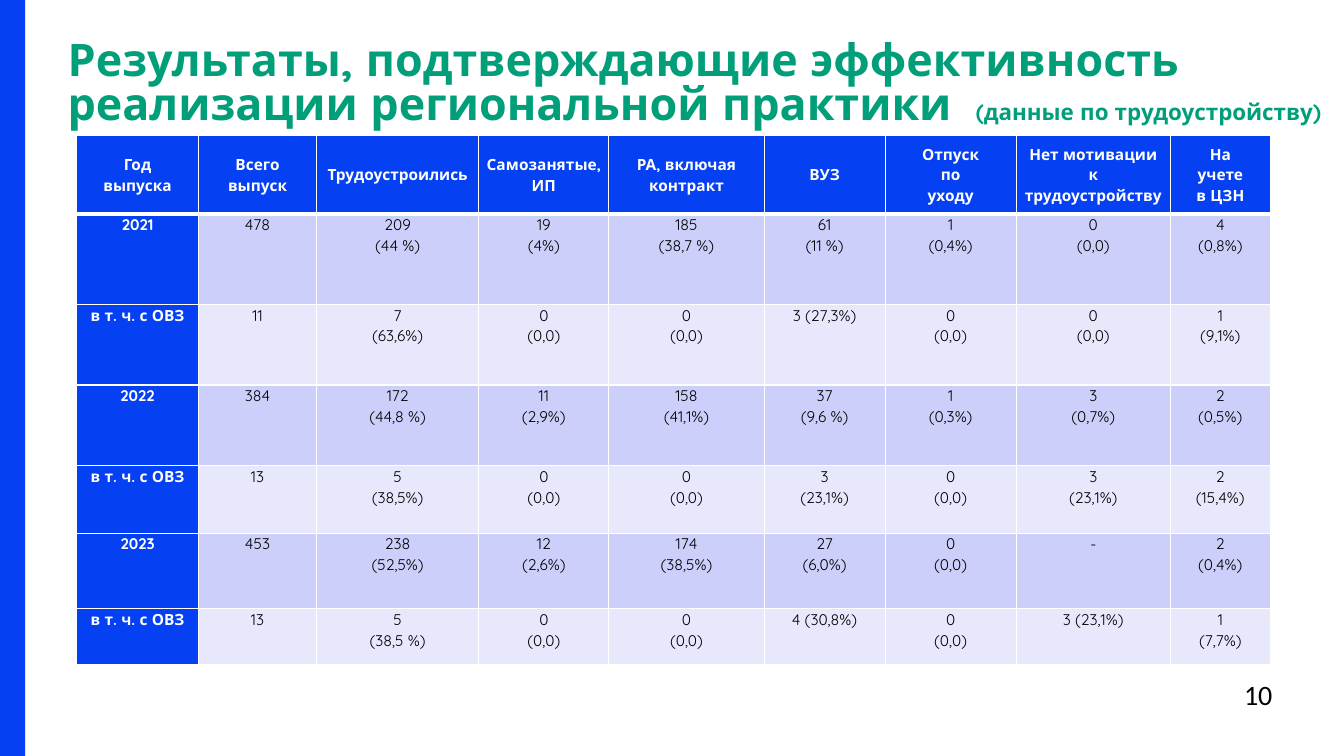
from lxml.etree import SubElement as Sub
from pptx import Presentation
from pptx.dml.color import RGBColor
from pptx.enum.shapes import MSO_SHAPE as Shape
from pptx.enum.text import MSO_ANCHOR as Anchor, PP_ALIGN as Align
from pptx.oxml.ns import qn
from pptx.util import Pt

PX = 9144
BLUE = RGBColor(0x05, 0x40, 0xF2)
GREEN = RGBColor(0x00, 0x9F, 0x79)
WHITE = RGBColor(0xFF, 0xFF, 0xFF)
BLACK = RGBColor(0x00, 0x00, 0x00)
BANDS = RGBColor(0xCC, 0xCF, 0xFA), RGBColor(0xE7, 0xE8, 0xFC)
FACE = "Quicksand"
COLS = [121, 117, 161, 129, 154, 120, 130, 153, 99]
ROWS = [78, 90, 80, 80, 67, 75, 55]
HEAD = ["Год\nвыпуска", "Всего выпуск", "Трудоустроились", "Самозанятые, ИП",
        "РА, включая\nконтракт", "ВУЗ", "Отпуск\nпо\nуходу",
        "Нет мотивации к трудоустройству", "На\nучете\nв ЦЗН"]
ZERO = "0\n(0,0)"
PART = "в т. ч. с ОВЗ"
DATA = [
    HEAD,
    ["2021", "478", "209\n(44 %)", "19\n(4%)", "185\n(38,7 %)", "61\n(11 %)",
     "1\n(0,4%)", ZERO, "4\n(0,8%)"],
    [PART, "11", "7\n(63,6%)", ZERO, ZERO, "3 (27,3%)", ZERO, ZERO, "1\n(9,1%)"],
    ["2022", "384", "172\n(44,8 %)", "11\n(2,9%)", "158\n(41,1%)", "37\n(9,6 %)",
     "1\n(0,3%)", "3\n(0,7%)", "2\n(0,5%)"],
    [PART, "13", "5\n(38,5%)", ZERO, ZERO, "3\n(23,1%)", ZERO, "3\n(23,1%)",
     "2\n(15,4%)"],
    ["2023", "453", "238\n(52,5%)", "12\n(2,6%)", "174\n(38,5%)", "27\n(6,0%)",
     ZERO, "-", "2\n(0,4%)"],
    [PART, "13", "5\n(38,5 %)", ZERO, ZERO, "4 (30,8%)", ZERO, "3 (23,1%)",
     "1\n(7,7%)"],
]


def scale(box):
    return [n * PX for n in box]


def style(font, size, color, bold=False, face=FACE):
    font.name = face
    font.size = Pt(size)
    font.bold = bold
    font.color.rgb = color


def add_bar(slide, box):
    bar = slide.shapes.add_shape(Shape.RECTANGLE, *scale(box))
    bar.shadow.inherit = False
    bar.fill.solid()
    bar.fill.fore_color.rgb = BLUE
    bar.line.fill.background()


def add_title(slide, box):
    frame = slide.shapes.add_textbox(*scale(box)).text_frame
    frame.word_wrap = True
    frame.margin_left = frame.margin_right = 0
    frame.margin_top = frame.margin_bottom = 0
    para = frame.paragraphs[0]
    para.line_spacing = Pt(32)
    parts = [
        ("Результаты, подтверждающие эффективность реализации региональной практики", 32),
        (" ", 32),
        ("(данные по трудоустройству)", 16),
    ]
    for text, size in parts:
        run = para.add_run()
        run.text = text
        style(run.font, size, GREEN, True)
        if text == " ":
            run.font._element.set("spc", "800")


def add_edges(cell, row):
    props = cell._tc.get_or_add_tcPr()
    wide = {"lnB": row == 0, "lnT": row == 1}
    for side in ("lnL", "lnR", "lnT", "lnB"):
        width = Pt(3 if wide.get(side) else 1)
        line = Sub(props, qn(f"a:{side}"), w=str(width))
        fill = Sub(line, qn("a:solidFill"))
        Sub(fill, qn("a:srgbClr"), val=str(WHITE))


def fill_cell(cell, text, row, col):
    head = row == 0 or col == 0
    cell.margin_left = cell.margin_right = 7 * PX
    cell.margin_top = cell.margin_bottom = 0
    cell.vertical_anchor = Anchor.MIDDLE if row == 0 else Anchor.TOP
    add_edges(cell, row)
    cell.fill.solid()
    cell.fill.fore_color.rgb = BLUE if head else BANDS[(row - 1) % 2]
    cell.text_frame.text = text
    for para in cell.text_frame.paragraphs:
        para.alignment = Align.CENTER
        para.line_spacing = 1.07
        for run in para.runs:
            style(run.font, 11, WHITE if head else BLACK, head)


def add_grid(slide, left, top):
    box = left, top, sum(COLS), sum(ROWS)
    grid = slide.shapes.add_table(len(ROWS), len(COLS), *scale(box)).table
    for col, width in zip(grid.columns, COLS):
        col.width = width * PX
    for row, height in zip(grid.rows, ROWS):
        row.height = height * PX
    for i, line in enumerate(DATA):
        for j, text in enumerate(line):
            fill_cell(grid.cell(i, j), text, i, j)


def add_number(slide, box):
    frame = slide.shapes.add_textbox(*scale(box)).text_frame
    frame.word_wrap = False
    frame.text = "10"
    style(frame.paragraphs[0].runs[0].font, 20, BLACK, face="Calibri")


def main():
    deck = Presentation()
    deck.slide_width, deck.slide_height = scale((1333, 750))
    slide = deck.slides.add_slide(deck.slide_layouts[6])
    add_number(slide, (1224, 667, 53, 44))
    add_title(slide, (67, 40, 1245, 49))
    add_bar(slide, (0, 0, 25, 750))
    add_grid(slide, 76, 134)
    deck.save("out.pptx")


if __name__ == "__main__":
    main()
